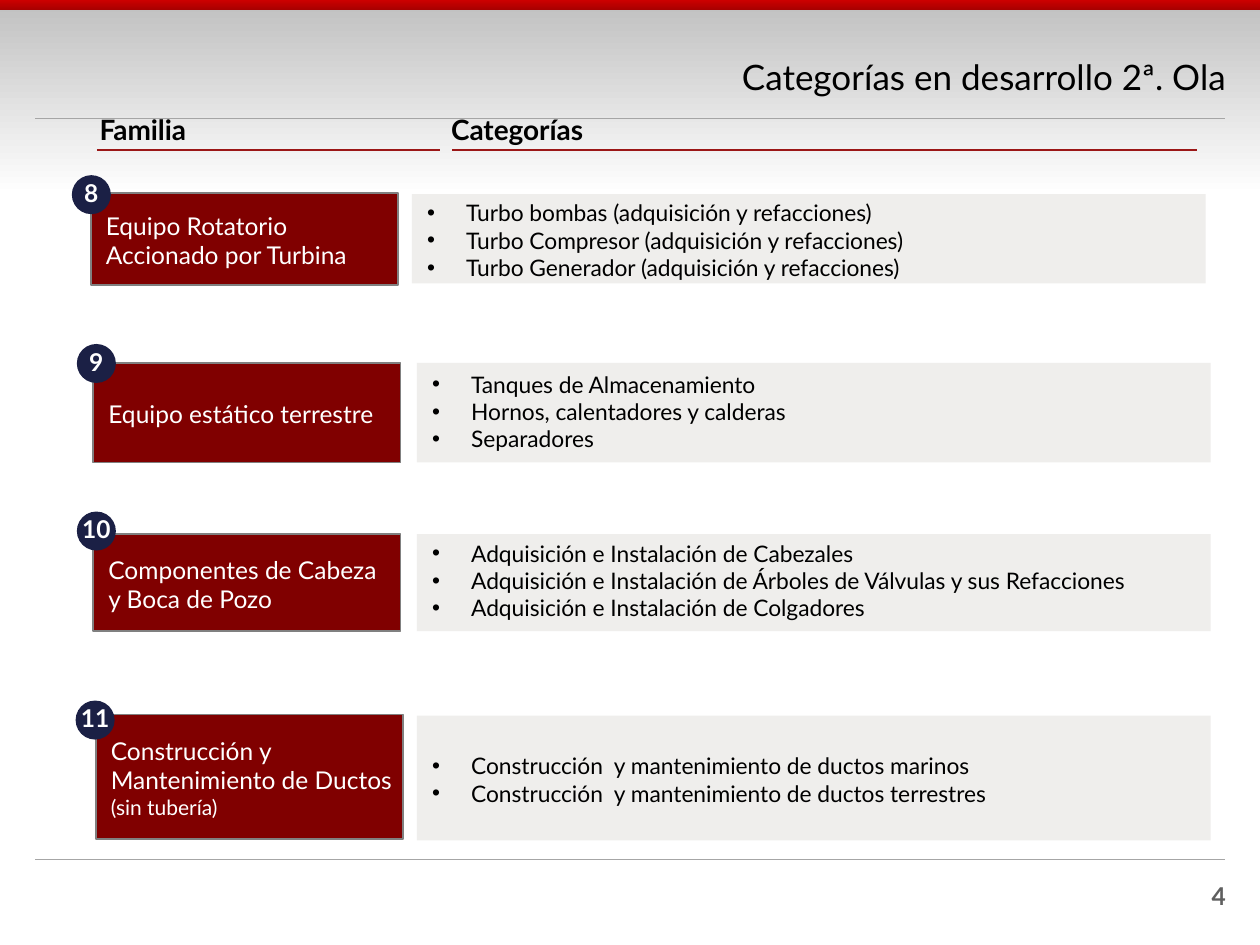
from lxml.etree import SubElement
from pptx import Presentation
from pptx.dml.color import RGBColor
from pptx.enum.shapes import MSO_CONNECTOR, MSO_SHAPE as Kind
from pptx.enum.text import MSO_ANCHOR as Anchor, PP_ALIGN as Align
from pptx.oxml.ns import qn
from pptx.util import Inches, Pt

color = RGBColor.from_string


def write(shape, paras, size, ink="000000", bold=False, align=Align.LEFT,
          anchor=Anchor.MIDDLE, pad=(0, 0, 0, 0), gap=1.0, wrap=True, dots=False):
    """Each paragraph is a list of runs; a run is text or (text, size)."""
    frame = shape.text_frame
    frame.word_wrap, frame.vertical_anchor = wrap, anchor
    (frame.margin_left, frame.margin_top,
     frame.margin_right, frame.margin_bottom) = map(Inches, pad)
    for i, runs in enumerate(paras):
        para = frame.add_paragraph() if i else frame.paragraphs[0]
        para.alignment, para.line_spacing = align, gap
        if dots:
            props = para._p.get_or_add_pPr()
            props.set("marL", str(Inches(0.31)))
            props.set("indent", str(-Inches(0.31)))
            SubElement(props, qn("a:buFont"), typeface="Arial")
            SubElement(props, qn("a:buChar"), char="•")
        for part in runs:
            text, points = (part, size) if isinstance(part, str) else part
            run = para.add_run()
            run.text = text
            font = run.font
            font.name, font.size, font.bold = "Lato", Pt(points), bold
            font.color.rgb = color(ink)


def draw(kind, at, fill, edge=None):
    """Fill is one colour, or a pair for a top-to-bottom gradient."""
    shape = slide.shapes.add_shape(kind, *map(Inches, at))
    shape.shadow.inherit = False
    if isinstance(fill, str):
        shape.fill.solid()
        shape.fill.fore_color.rgb = color(fill)
    else:
        shape.fill.gradient()
        shape.fill.gradient_angle = 270
        for stop, tone, place in zip(shape.fill.gradient_stops, fill, (0, 1)):
            stop.color.rgb, stop.position = color(tone), place
    if edge:
        shape.line.color.rgb, shape.line.width = color(edge), Pt(1)
    else:
        shape.line.fill.background()
    return shape


deck = Presentation()
deck.slide_width, deck.slide_height = Inches(10), Inches(7.5)
slide = deck.slides.add_slide(deck.slide_layouts[6])

# Header bands and rules
draw(Kind.RECTANGLE, (0, 0, 10, 1.55), ("C0C0C0", "FFFFFF"))
draw(Kind.RECTANGLE, (0, 0, 10, 0.08), ("CC0000", "A80000"))

rules = [(0.28, 9.72, 6.82, "A6A6A6"), (0.28, 9.72, 0.94, "A6A6A6"),
         (3.59, 9.5, 1.19, "9B1717"), (0.77, 3.49, 1.19, "9B1717")]
for left, right, y, tone in rules:
    rule = slide.shapes.add_connector(
        MSO_CONNECTOR.STRAIGHT, Inches(left), Inches(y), Inches(right), Inches(y))
    rule.line.color.rgb, rule.line.width = color(tone), Pt(0.75)
    SubElement(rule._element.spPr, qn("a:effectLst"))

# Title, column heads and page number
head = dict(size=16, bold=True, anchor=Anchor.TOP, gap=0.9)
labels = [
    ("Categorías en desarrollo 2ª. Ola", (2.05, 0.34, 7.68, 0.57),
     dict(size=20, align=Align.RIGHT, gap=0.9)),
    ("Familia", (0.79, 0.92, 2.4, 0.24), head),
    ("Categorías", (3.58, 0.92, 5.28, 0.24), head),
    ("4", (7.4, 6.94, 2.33, 0.32),
     dict(size=14, ink="5F5F5F", bold=True, align=Align.RIGHT,
          anchor=Anchor.TOP, pad=(0.1, 0.05, 0, 0.05))),
]
for text, at, style in labels:
    write(slide.shapes.add_textbox(*map(Inches, at)), [[text]], **style)

# Rows: number, badge (x, y), family (x, y, height), family runs,
# list (x, y, height), list top inset, list anchor, list items
rows = [
    ("8", (0.57, 1.39), (0.72, 1.53, 0.73),
     ["Equipo Rotatorio Accionado por Turbina"],
     (3.27, 1.54, 0.71), 0.08, Anchor.MIDDLE,
     ["Turbo bombas (adquisición y refacciones)",
      "Turbo Compresor (adquisición y refacciones)",
      "Turbo Generador (adquisición y refacciones)"]),
    ("9", (0.61, 2.73), (0.74, 2.88, 0.79),
     ["Equipo estático terrestre"],
     (3.31, 2.88, 0.79), 0.04, Anchor.MIDDLE,
     ["Tanques de Almacenamiento",
      "Hornos, calentadores y calderas",
      "Separadores"]),
    ("10", (0.61, 4.06), (0.74, 4.24, 0.77),
     ["Componentes de Cabeza y Boca de Pozo"],
     (3.31, 4.24, 0.77), 0.04, Anchor.TOP,
     ["Adquisición e Instalación de Cabezales",
      "Adquisición e Instalación de Árboles de Válvulas y sus Refacciones",
      "Adquisición e Instalación de Colgadores"]),
    ("11", (0.6, 5.56), (0.76, 5.67, 0.99),
     ["Construcción y Mantenimiento de Ductos ", ("(sin tubería)", 12)],
     (3.31, 5.68, 0.99), 0.08, Anchor.MIDDLE,
     ["Construcción  y mantenimiento de ductos marinos",
      "Construcción  y mantenimiento de ductos terrestres"]),
]
for num, spot, (fx, fy, fh), name, (lx, ly, lh), top, anchor, items in rows:
    panel = draw(Kind.RECTANGLE, (lx, ly, 6.3, lh), "EFEEEC")
    write(panel, [[item] for item in items], 13, anchor=anchor,
          pad=(0.12, top, 0.08, 0.06), dots=True)
    family = draw(Kind.RECTANGLE, (fx, fy, 2.44, fh), "800000", "808080")
    write(family, [name], 14, "FFFFFF", pad=(0.12, 0.08, 0.08, 0.06))
    badge = draw(Kind.OVAL, (*spot, 0.31, 0.31), "1B2045")
    write(badge, [[num]], 14, "FFFFFF", bold=True, align=Align.CENTER,
          gap=0.9, wrap=False)

deck.save("out.pptx")
